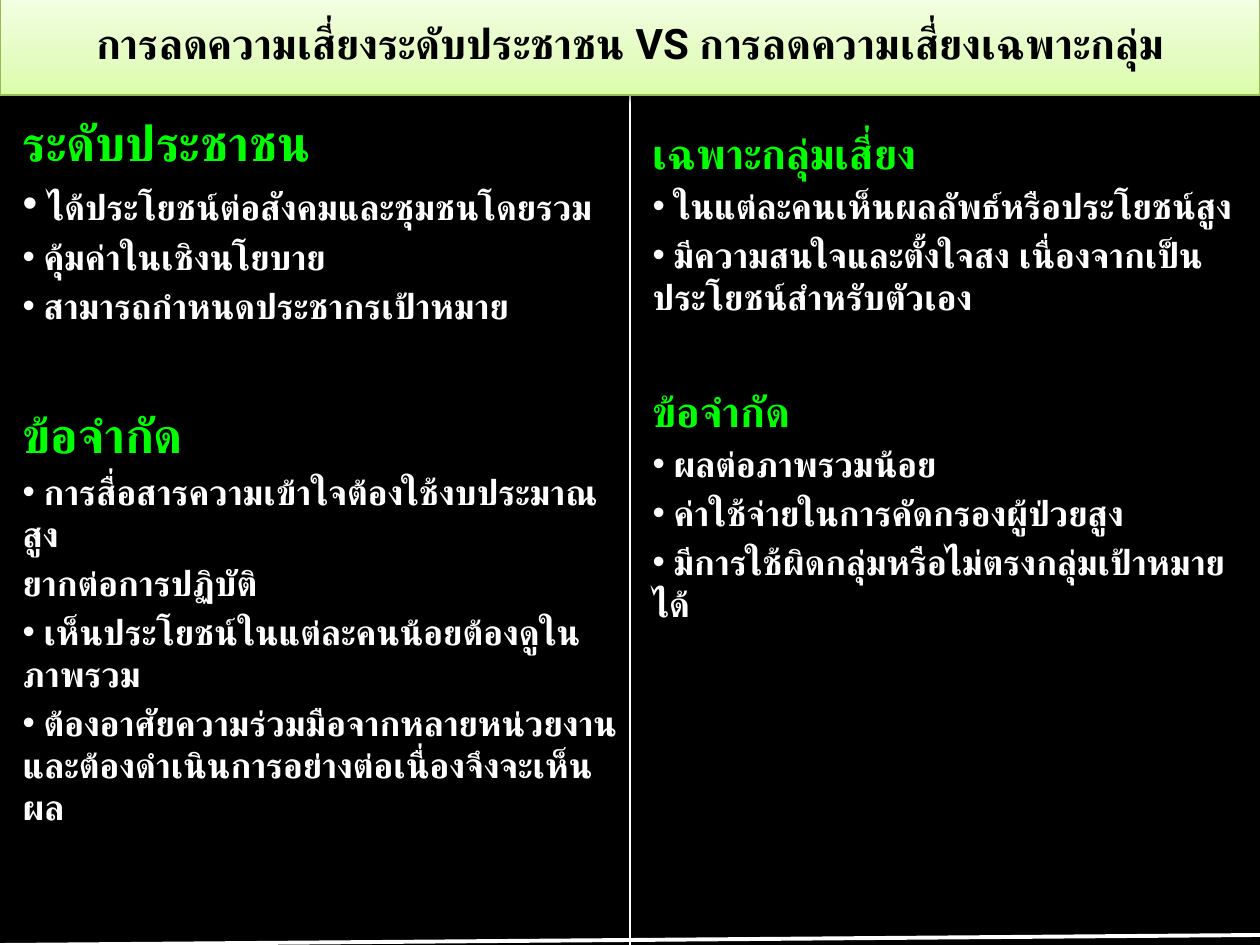
from dataclasses import dataclass

from lxml.etree import SubElement
from pptx import Presentation
from pptx.dml.color import RGBColor as RGB
from pptx.enum.shapes import MSO_CONNECTOR as Connector
from pptx.enum.text import MSO_ANCHOR as Anchor, MSO_AUTO_SIZE as AutoSize, PP_ALIGN as Align
from pptx.oxml.ns import qn
from pptx.util import Pt

EMU_PER_PX = 914400 / 126
WIDTH, HEIGHT = 1260, 945
TWO_CONTENT = 3


@dataclass(frozen=True)
class Theme:
    font: str = "Roboto"
    background: str = "000000"
    heading: str = "00FF00"
    text: str = "FFFFFF"
    title: str = "000000"
    title_border: str = "98B955"
    title_stops: tuple = ((0, "DAFDA7"), (35, "E4FCC2"), (100, "F5FFE7"))
    title_size: int = 24
    left_heading_size: int = 28
    right_heading_size: int = 24
    item_size: int = 20
    large_bullet_size: int = 24


THEME = Theme()

LEFT_SECTIONS = (
    ("ระดับประชาชน", (
        (True, "ได้ประโยชน์ต่อสังคมและชุมชนโดยรวม", THEME.large_bullet_size),
        (True, "คุ้มค่าในเชิงนโยบาย"),
        (True, "สามารถกำหนดประชากรเป้าหมาย"),
    )),
    ("ข้อจำกัด", (
        (True, "การสื่อสารความเข้าใจต้องใช้งบประมาณสูง"),
        (False, "ยากต่อการปฏิบัติ"),
        (True, "เห็นประโยชน์ในแต่ละคนน้อยต้องดูในภาพรวม"),
        (True, "ต้องอาศัยความร่วมมือจากหลายหน่วยงานและต้องดำเนินการอย่างต่อเนื่องจึงจะเห็นผล"),
    )),
)

RIGHT_SECTIONS = (
    ("เฉพาะกลุ่มเสี่ยง", (
        (True, "ในแต่ละคนเห็นผลลัพธ์หรือประโยชน์สูง"),
        (True, "มีความสนใจและตั้งใจสง เนื่องจากเป็นประโยชน์สำหรับตัวเอง"),
    )),
    ("ข้อจำกัด", (
        (True, "ผลต่อภาพรวมน้อย"),
        (True, "ค่าใช้จ่ายในการคัดกรองผู้ป่วยสูง"),
        (True, "มีการใช้ผิดกลุ่มหรือไม่ตรงกลุ่มเป้าหมายได้"),
    )),
)


def px(value):
    return round(value * EMU_PER_PX)


def place(shape, left, top, width, height):
    shape.left, shape.top = px(left), px(top)
    shape.width, shape.height = px(width), px(height)


def add_run(paragraph, text, size, color):
    run = paragraph.add_run()
    run.text = text
    font = run.font
    font.name, font.size, font.bold = THEME.font, Pt(size), True
    font.color.rgb = RGB.from_string(color)
    SubElement(font._element, qn("a:cs"), typeface=THEME.font)


def format_paragraph(paragraph, space_before, bullet=False):
    paragraph.alignment = Align.LEFT
    paragraph.space_before = Pt(space_before)
    properties = paragraph._p.get_or_add_pPr()
    properties.set("marL", "0")
    properties.set("indent", "0")
    if bullet:
        SubElement(properties, qn("a:buChar"), char="•")
    else:
        SubElement(properties, qn("a:buNone"))


def fill_column(body, box, sections, heading_size, first_line_spacing=1.0):
    place(body, *box)
    frame = body.text_frame
    frame.word_wrap, frame.auto_size = True, AutoSize.NONE
    frame.vertical_anchor = Anchor.TOP
    for index, (heading, items) in enumerate(sections):
        paragraph = frame.add_paragraph() if index else frame.paragraphs[0]
        if not index:
            paragraph.line_spacing = first_line_spacing
        format_paragraph(paragraph, heading_size * (1.6 if index else 0.2))
        add_run(paragraph, heading, heading_size, THEME.heading)
        for bullet, text, *bullet_size in items:
            paragraph = frame.add_paragraph()
            format_paragraph(paragraph, THEME.item_size * 0.2, bullet)
            if bullet_size:
                add_run(paragraph, " ", bullet_size[0], THEME.text)
            elif bullet:
                text = " " + text
            add_run(paragraph, text, THEME.item_size, THEME.text)


def add_gradient(shape):
    shape.fill.gradient()
    shape.fill.gradient_angle = 90
    stops = shape._element.spPr.find(qn("a:gradFill")).find(qn("a:gsLst"))
    for stop in list(stops):
        stops.remove(stop)
    for position, color in THEME.title_stops:
        stop = SubElement(stops, qn("a:gs"), pos=str(position * 1000))
        SubElement(stop, qn("a:srgbClr"), val=color)


def add_shadow(shape):
    effects = SubElement(shape._element.spPr, qn("a:effectLst"))
    shadow = SubElement(effects, qn("a:outerShdw"), blurRad=str(Pt(3.1)),
                        dist=str(Pt(1.6)), dir="5400000", rotWithShape="0")
    color = SubElement(shadow, qn("a:srgbClr"), val="000000")
    SubElement(color, qn("a:alpha"), val="38000")


def fill_title(title, text):
    place(title, 0, -10, WIDTH, 105)
    add_gradient(title)
    title.line.color.rgb = RGB.from_string(THEME.title_border)
    title.line.width = Pt(0.75)
    add_shadow(title)
    frame = title.text_frame
    frame.word_wrap, frame.auto_size = True, AutoSize.NONE
    frame.vertical_anchor = Anchor.MIDDLE
    paragraph = frame.paragraphs[0]
    paragraph.alignment = Align.CENTER
    add_run(paragraph, text, THEME.title_size, THEME.title)


def add_rule(slide, start, end, weight):
    rule = slide.shapes.add_connector(Connector.STRAIGHT, *map(px, start + end))
    rule.line.color.rgb = RGB.from_string(THEME.text)
    rule.line.width = Pt(weight)
    SubElement(rule._element.spPr, qn("a:effectLst"))


def main():
    presentation = Presentation()
    presentation.slide_width, presentation.slide_height = px(WIDTH), px(HEIGHT)
    slide = presentation.slides.add_slide(presentation.slide_layouts[TWO_CONTENT])
    background = slide.background.fill
    background.solid()
    background.fore_color.rgb = RGB.from_string(THEME.background)

    title, left_body, right_body = slide.placeholders
    fill_column(left_body, (10, 106, 620, 830), LEFT_SECTIONS, THEME.left_heading_size)
    fill_column(right_body, (640, 96, 620, 840), RIGHT_SECTIONS, THEME.right_heading_size, 1.5)
    add_rule(slide, (0, HEIGHT), (WIDTH, 935), 2.25)
    add_rule(slide, (WIDTH // 2, 84), (WIDTH // 2, HEIGHT), 1)
    fill_title(title, "การลดความเสี่ยงระดับประชาชน VS การลดความเสี่ยงเฉพาะกลุ่ม")
    slide.shapes._spTree.append(title._element)
    presentation.save("out.pptx")


if __name__ == "__main__":
    main()
